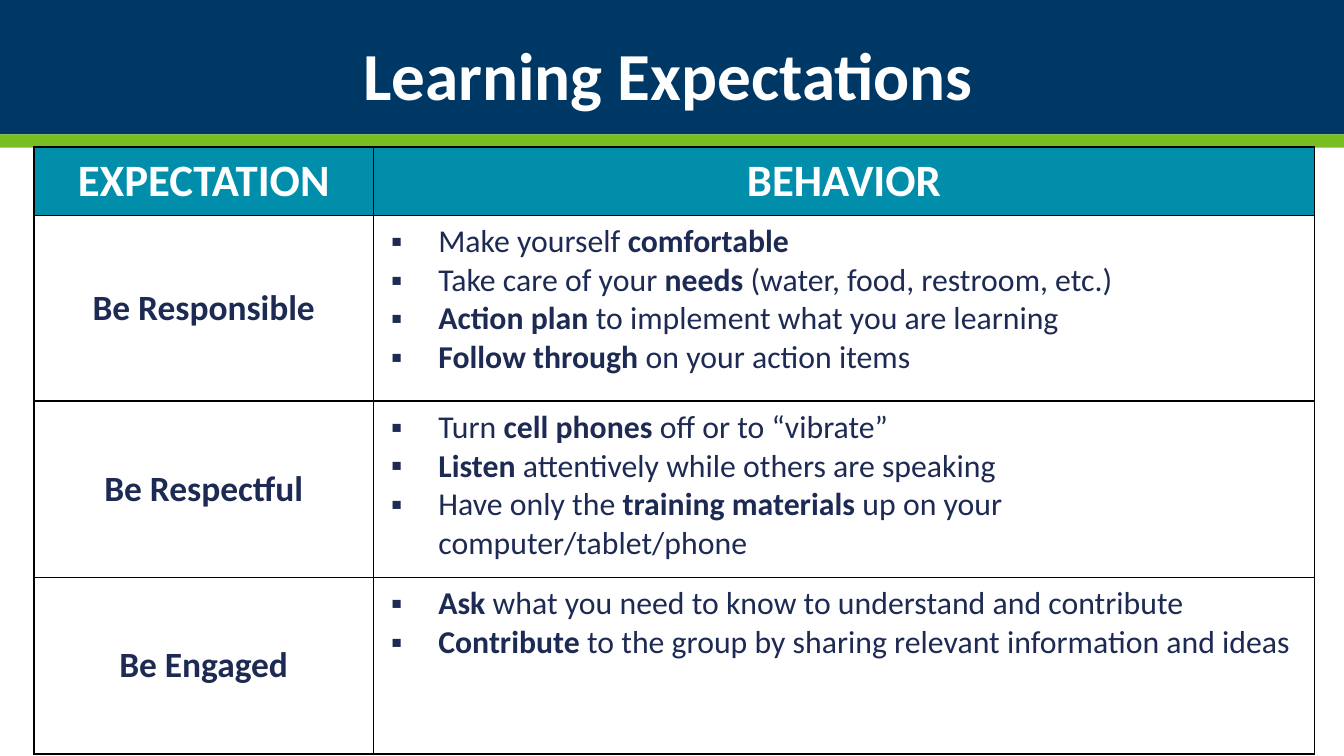
"""Build the Learning Expectations slide with its table of expected behaviors."""

from typing import NamedTuple

from lxml.etree import SubElement
from pptx import Presentation
from pptx.dml.color import RGBColor
from pptx.enum.shapes import MSO_SHAPE
from pptx.enum.text import MSO_ANCHOR, PP_ALIGN
from pptx.oxml.ns import qn
from pptx.slide import Slide
from pptx.table import Table, _Cell
from pptx.text.text import _Paragraph
from pptx.util import Cm, Pt

NAVY = RGBColor(0x00, 0x38, 0x65)
GREEN = RGBColor(0x78, 0xBE, 0x21)
TEAL = RGBColor(0x00, 0x8E, 0xAA)
INK = RGBColor(0x1D, 0x2A, 0x53)
WHITE = RGBColor(0xFF, 0xFF, 0xFF)
BLACK = RGBColor(0x00, 0x00, 0x00)
FONT = "Calibri"
SLIDE_WIDTH = Cm(25.4)
BOLD_MARK = "**"


class Band(NamedTuple):
    top: float
    height: float
    color: RGBColor


class Expectation(NamedTuple):
    name: str
    height: float
    behaviors: list[str]


BANDS = [Band(0, 2.54, NAVY), Band(2.54, 0.25, GREEN)]
HEADINGS = ["EXPECTATION", "BEHAVIOR"]
COLUMN_WIDTHS = [6.42, 17.78]
HEADING_HEIGHT = 1.15
EXPECTATIONS = [
    Expectation("Be Responsible", 3.51, [
        "Make yourself **comfortable**",
        "Take care of your **needs** (water, food, restroom, etc.)",
        "**Action plan **to implement what you are learning",
        "**Follow through **on your action items",
    ]),
    Expectation("Be Respectful", 3.33, [
        "Turn **cell phones** off or to “vibrate”",
        "**Listen **attentively while others are speaking",
        "Have only the **training materials **up on your computer/tablet/phone",
    ]),
    Expectation("Be Engaged", 3.33, [
        "**Ask** what you need to know to understand and contribute",
        "**Contribute **to the group by sharing relevant information and ideas",
    ]),
]


def format_font(paragraph: _Paragraph, size: float, color: RGBColor) -> None:
    paragraph.font.name = FONT
    paragraph.font.size = Pt(size)
    paragraph.font.color.rgb = color


def add_marked_text(paragraph: _Paragraph, text: str) -> None:
    for index, part in enumerate(text.split(BOLD_MARK)):
        if part:
            run = paragraph.add_run()
            run.text = part
            run.font.bold = index % 2 == 1


def add_bullet(paragraph: _Paragraph) -> None:
    properties = paragraph._p.get_or_add_pPr()
    properties.set("marL", str(Cm(0.97)))
    properties.set("indent", str(Cm(-0.89)))
    bullet_color = SubElement(properties, qn("a:buClr"))
    SubElement(bullet_color, qn("a:srgbClr"), val=str(INK))
    SubElement(properties, qn("a:buFont"), typeface=FONT)
    SubElement(properties, qn("a:buChar"), char="▪")


def style_cell(cell: _Cell, color: RGBColor) -> None:
    properties = cell._tc.get_or_add_tcPr()
    for side in ("lnL", "lnR", "lnT", "lnB"):
        border = SubElement(properties, qn(f"a:{side}"), w=str(Pt(1)))
        fill = SubElement(border, qn("a:solidFill"))
        SubElement(fill, qn("a:srgbClr"), val=str(BLACK))
    cell.fill.solid()
    cell.fill.fore_color.rgb = color


def fill_label(cell: _Cell, text: str, size: float, color: RGBColor) -> None:
    paragraph = cell.text_frame.paragraphs[0]
    paragraph.alignment = PP_ALIGN.CENTER
    add_marked_text(paragraph, f"{BOLD_MARK}{text}{BOLD_MARK}")
    format_font(paragraph, size, color)


def fill_behaviors(cell: _Cell, behaviors: list[str]) -> None:
    frame = cell.text_frame
    for index, behavior in enumerate(behaviors):
        paragraph = frame.add_paragraph() if index else frame.paragraphs[0]
        add_bullet(paragraph)
        add_marked_text(paragraph, behavior)
        format_font(paragraph, 17, INK)


def add_band(slide: Slide, band: Band) -> None:
    shape = slide.shapes.add_shape(
        MSO_SHAPE.RECTANGLE, 0, Cm(band.top), SLIDE_WIDTH, Cm(band.height))
    shape.shadow.inherit = False
    shape.fill.solid()
    shape.fill.fore_color.rgb = band.color
    shape.line.fill.background()
    slide.shapes.title.element.addprevious(shape.element)


def fill_title(slide: Slide) -> None:
    title = slide.shapes.title
    title.left, title.top, title.width, title.height = (
        Cm(1.3), Cm(0.74), Cm(22.66), Cm(1.3))
    frame = title.text_frame
    frame.margin_left = frame.margin_right = Cm(0.18)
    frame.margin_top = frame.margin_bottom = Cm(0.1)
    frame.vertical_anchor = MSO_ANCHOR.MIDDLE
    paragraph = frame.paragraphs[0]
    paragraph.text = "Learning Expectations"
    paragraph.alignment = PP_ALIGN.CENTER
    format_font(paragraph, 36, WHITE)
    paragraph.font.bold = True


def add_expectation_table(slide: Slide) -> Table:
    heights = [HEADING_HEIGHT, *(item.height for item in EXPECTATIONS)]
    table = slide.shapes.add_table(
        len(heights), len(HEADINGS), Cm(0.64), Cm(2.78),
        Cm(sum(COLUMN_WIDTHS)), Cm(sum(heights))).table
    for column, width in zip(table.columns, COLUMN_WIDTHS):
        column.width = Cm(width)
    for row, height in zip(table.rows, heights):
        row.height = Cm(height)
    for cell, heading in zip(table.rows[0].cells, HEADINGS):
        style_cell(cell, TEAL)
        fill_label(cell, heading, 24, WHITE)
    for row_index, expectation in enumerate(EXPECTATIONS, start=1):
        label, details = table.rows[row_index].cells
        style_cell(label, WHITE)
        style_cell(details, WHITE)
        label.vertical_anchor = MSO_ANCHOR.MIDDLE
        fill_label(label, expectation.name, 19, INK)
        fill_behaviors(details, expectation.behaviors)
    return table


def main() -> None:
    presentation = Presentation()
    presentation.slide_width = SLIDE_WIDTH
    presentation.slide_height = Cm(14.28)
    slide = presentation.slides.add_slide(presentation.slide_layouts[5])
    for band in BANDS:
        add_band(slide, band)
    fill_title(slide)
    add_expectation_table(slide)
    presentation.save("out.pptx")


if __name__ == "__main__":
    main()
